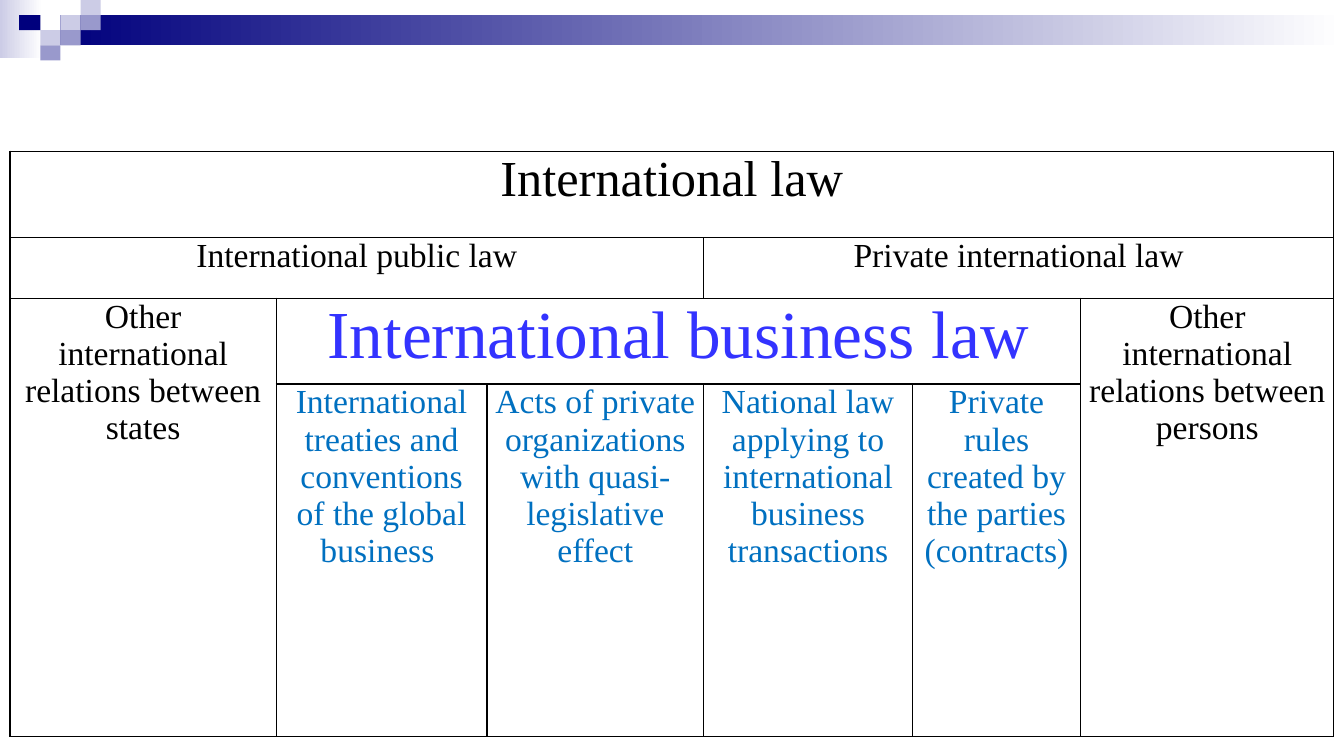
import lxml.etree
import pptx
import pptx.dml.color
import pptx.enum.shapes
import pptx.enum.text
import pptx.oxml.ns
import pptx.util

RGBColor = pptx.dml.color.RGBColor
BLACK = RGBColor(0x00, 0x00, 0x00)
WHITE = RGBColor(0xFF, 0xFF, 0xFF)
NAVY = RGBColor(0x00, 0x00, 0x7D)
LAVENDER = RGBColor(0xCC, 0xCC, 0xE6)
PERIWINKLE = RGBColor(0x99, 0x99, 0xCC)
VIVID_BLUE = RGBColor(0x33, 0x33, 0xFF)
SOURCE_BLUE = RGBColor(0x00, 0x70, 0xC0)


def write_text(frame, text, size=24, color=BLACK, font="Times New Roman"):
    paragraph = frame.paragraphs[0]
    paragraph.alignment = pptx.enum.text.PP_ALIGN.CENTER
    paragraph.line_spacing = 1.0
    paragraph.space_before = pptx.util.Pt(0.1)
    run = paragraph.add_run()
    run.text = text
    run.font.size = pptx.util.Pt(size)
    run.font.name = font
    run.font.color.rgb = color


class SlideBuilder:
    """Draws styled elements on a slide grid of 0.2 by 0.15 inch units."""

    column = pptx.util.Inches(0.2)
    row = pptx.util.Inches(0.15)
    border_width = pptx.util.Pt(1)

    def __init__(self, presentation):
        self.slide = presentation.slides.add_slide(presentation.slide_layouts[6])

    def box(self, left, top, width, height):
        return (round(left * self.column), round(top * self.row),
                round(width * self.column), round(height * self.row))

    def block(self, left, top, color, width=1, height=1, fade_to=None):
        shape = self.slide.shapes.add_shape(
            pptx.enum.shapes.MSO_SHAPE.RECTANGLE, *self.box(left, top, width, height))
        shape.shadow.inherit = False
        shape.line.fill.background()
        if fade_to is None:
            shape.fill.solid()
            shape.fill.fore_color.rgb = color
            return
        shape.fill.gradient()
        shape.fill.gradient_angle = 0
        for stop, stop_color, position in zip(
                shape.fill.gradient_stops, (color, fade_to), (0, 1)):
            stop.color.rgb = stop_color
            stop.position = position

    def border(self, cell):
        properties = cell._tc.get_or_add_tcPr()
        qualified = pptx.oxml.ns.qn
        for side in ("a:lnL", "a:lnR", "a:lnT", "a:lnB"):
            line = lxml.etree.SubElement(
                properties, qualified(side), w=str(self.border_width))
            fill = lxml.etree.SubElement(line, qualified("a:solidFill"))
            lxml.etree.SubElement(fill, qualified("a:srgbClr"), val=str(BLACK))

    def table(self, left, top, widths, heights, entries):
        table = self.slide.shapes.add_table(
            len(heights), len(widths),
            *self.box(left, top, sum(widths), sum(heights))).table
        table.first_row = table.horz_banding = False
        for table_column, width in zip(table.columns, widths):
            table_column.width = round(width * self.column)
        for table_row, height in zip(table.rows, heights):
            table_row.height = round(height * self.row)
        for cell in table.iter_cells():
            self.border(cell)
            cell.fill.background()
            cell.margin_left = cell.margin_right = pptx.util.Inches(0.07)
            cell.margin_top = cell.margin_bottom = 0
        for row, column, row_span, column_span, text, style in entries:
            cell = table.cell(row, column)
            if row_span * column_span > 1:
                cell.merge(table.cell(row + row_span - 1, column + column_span - 1))
            write_text(cell.text_frame, text, **style)


def main():
    presentation = pptx.Presentation()
    presentation.slide_width = pptx.util.Inches(13.33)
    presentation.slide_height = pptx.util.Inches(7.5)
    builder = SlideBuilder(presentation)

    builder.block(0, 0, LAVENDER, width=2.1, height=3.87, fade_to=WHITE)
    builder.block(3, 1, NAVY, width=63.65, height=2, fade_to=WHITE)
    for left, top, color in (
            (3, 1, LAVENDER), (4, 0, LAVENDER), (4, 1, PERIWINKLE),
            (2, 2, LAVENDER), (3, 2, PERIWINKLE), (2, 3, PERIWINKLE)):
        builder.block(left, top, color)
    builder.block(0.95, 1, NAVY, width=1.05)

    sources = (
        "International treaties and conventions of the global business ",
        "Acts of private organizations with quasi-legislative effect",
        "National law applying to international business transactions",
        "Private rules created by the parties (contracts)",
    )
    entries = [
        (0, 0, 1, 6, "International law", {"size": 36}),
        (1, 0, 1, 3, "International public law", {}),
        (1, 3, 1, 3, "Private international law", {}),
        (2, 0, 2, 1, "Other international relations between states", {}),
        (2, 1, 1, 4, "International business law", {"size": 48, "color": VIVID_BLUE}),
        (2, 5, 2, 1, "Other international relations between persons", {}),
    ]
    entries += [(3, column, 1, 1, text, {"color": SOURCE_BLUE})
                for column, text in enumerate(sources, start=1)]
    builder.table(
        0.5, 10,
        widths=(13.2, 10.45, 10.75, 10.35, 8.35, 12.55),
        heights=(5.73, 4, 5.67, 23.33),
        entries=entries)
    presentation.save("out.pptx")


if __name__ == "__main__":
    main()
